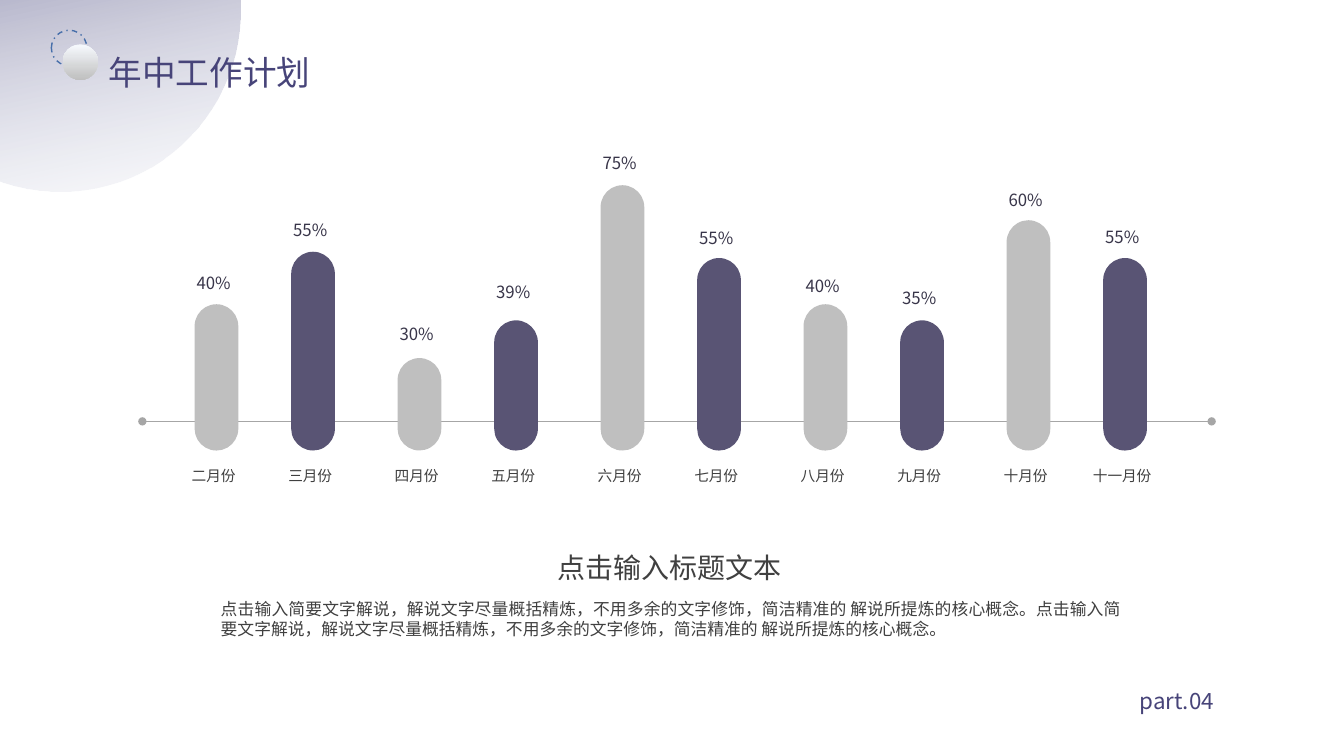
import pptx
import pptx.dml.color
import pptx.enum.dml
import pptx.enum.shapes
import pptx.enum.text
import pptx.oxml
import pptx.oxml.ns
import pptx.util
from lxml import etree

Pt = pptx.util.Pt
RGBColor = pptx.dml.color.RGBColor
Align = pptx.enum.text.PP_ALIGN
Preset = pptx.enum.shapes.MSO_SHAPE
qn = pptx.oxml.ns.qn

FONT = "Noto Sans CJK SC"
INDIGO = RGBColor(0x47, 0x44, 0x79)
PURPLE = RGBColor(0x59, 0x54, 0x74)
DARK_PURPLE = RGBColor(0x38, 0x35, 0x49)
SILVER = RGBColor(0xBF, 0xBF, 0xBF)
AXIS_GREY = RGBColor(0xA6, 0xA6, 0xA6)
TEXT_GREY = RGBColor(0x40, 0x40, 0x40)
ICE = RGBColor(0xF7, 0xFA, 0xFE)
BLUE = RGBColor(0x47, 0x6F, 0xAA)

# Month, percentage, bar height, top of the percentage label
MONTHS = [
    ("二月份", "40%", 104.5, 191.5),
    ("三月份", "55%", 142, 153.5),
    ("四月份", "30%", 66, 227.5),
    ("五月份", "39%", 93, 198),
    ("六月份", "75%", 189.5, 105.5),
    ("七月份", "55%", 137.5, 159),
    ("八月份", "40%", 104.5, 193.5),
    ("九月份", "35%", 93, 202),
    ("十月份", "60%", 164.5, 132),
    ("十一月份", "55%", 137.5, 158.5),
]
FIRST_BAR_LEFT, PAIR_PITCH, BAR_PITCH = 139, 145, 69
BAR_WIDTH, BAR_BOTTOM = 31.2, 321.8
LABEL_OFFSET, LABEL_WIDTH = 24.6, 76.4
MONTH_TOP = 330

SUMMARY = (
    "点击输入简要文字解说，解说文字尽量概括精炼，不用多余的文字修饰，简洁精准的 解说所提炼的核心概念。"
    "点击输入简要文字解说，解说文字尽量概括精炼，不用多余的文字修饰，简洁精准的 解说所提炼的核心概念。"
)


def place(shape, left, top, width, height):
    shape.left, shape.top = Pt(left), Pt(top)
    shape.width, shape.height = Pt(width), Pt(height)


def write(shape, text, size, color, align, spacing=None, inset=None):
    """Fill a text shape with one formatted paragraph."""
    frame = shape.text_frame
    frame.text = text
    frame.word_wrap = True
    frame.auto_size = pptx.enum.text.MSO_AUTO_SIZE.SHAPE_TO_FIT_TEXT
    frame.vertical_anchor = pptx.enum.text.MSO_ANCHOR.TOP
    if inset is not None:
        frame.margin_left = frame.margin_right = Pt(inset)
        frame.margin_top = frame.margin_bottom = Pt(inset)
    para = frame.paragraphs[0]
    para.alignment = align
    para.line_spacing = spacing
    para.font.size = Pt(size)
    para.font.color.rgb = color
    para.font.name = FONT
    east_asian = etree.SubElement(para.font._element, qn("a:ea"))
    east_asian.set("typeface", FONT)


def add_text(page, bounds, *content, **options):
    box = page.shapes.add_textbox(*map(Pt, bounds))
    write(box, *content, **options)


def add_plain_shape(page, preset, *bounds):
    shape = page.shapes.add_shape(preset, *map(Pt, bounds))
    shape.shadow.inherit = False
    shape.line.fill.background()
    return shape


def fill_downward(shape, start, end):
    shape.fill.gradient()
    shape.fill.gradient_angle = 270
    for stop, color, position in zip(shape.fill.gradient_stops, (start, end), (0, 1)):
        stop.color.rgb = color
        stop.position = position


def add_corner_decoration(page):
    disc = add_plain_shape(page, Preset.OVAL, -87, -124.5, 259, 261.5)
    disc.rotation = 168
    fill_downward(disc, ICE, INDIGO)
    first_color = next(disc.fill._xPr.iter(qn("a:srgbClr")))
    etree.SubElement(first_color, qn("a:alpha")).set("val", "29000")

    ring = add_plain_shape(page, Preset.OVAL, 36.7, 21.6, 25.4, 25.4)
    ring.fill.background()
    ring.line.color.rgb = BLUE
    ring.line.width = Pt(1)
    ring.line.dash_style = pptx.enum.dml.MSO_LINE.DASH_DOT

    ball = add_plain_shape(page, Preset.OVAL, 44.7, 31.7, 25.4, 25.4)
    fill_downward(ball, ICE, SILVER)


def add_axis(page, left, right, height):
    axis = page.shapes.add_connector(
        pptx.enum.shapes.MSO_CONNECTOR.STRAIGHT,
        Pt(left), Pt(height), Pt(right), Pt(height),
    )
    axis.line.color.rgb = AXIS_GREY
    axis.line.width = Pt(0.5)
    outline = axis.line._get_or_add_ln()
    for end in ("a:headEnd", "a:tailEnd"):
        etree.SubElement(outline, qn(end)).set("type", "oval")
    etree.SubElement(axis.element.spPr, qn("a:effectLst"))


def add_month(page, index, month, percentage, height, label_top):
    pair, second = divmod(index, 2)
    left = FIRST_BAR_LEFT + pair * PAIR_PITCH + second * BAR_PITCH
    bar = add_plain_shape(page, Preset.ROUNDED_RECTANGLE,
                          left, BAR_BOTTOM - height, BAR_WIDTH, height)
    bar.adjustments[0] = 0.5
    bar.fill.solid()
    bar.fill.fore_color.rgb = PURPLE if second else SILVER
    label_left = left - LABEL_OFFSET
    add_text(page, (label_left, MONTH_TOP, LABEL_WIDTH, 20),
             month, 10.5, TEXT_GREY, Align.CENTER)
    add_text(page, (label_left, label_top, LABEL_WIDTH, 21.8),
             percentage, 12, DARK_PURPLE, Align.CENTER)


def main():
    deck = pptx.Presentation()
    deck.slide_width, deck.slide_height = Pt(960), Pt(540)
    page = deck.slides.add_slide(deck.slide_layouts[5])

    add_corner_decoration(page)
    title = page.shapes.title
    page.shapes.element.append(title.element)  # in front of the disc
    place(title, 70.5, 18.7, 229.7, 46)
    write(title, "年中工作计划", 24, INDIGO, Align.JUSTIFY, spacing=1.5)

    add_axis(page, 101.7, 865.5, 301)
    for index, month in enumerate(MONTHS):
        add_month(page, index, *month)

    add_text(page, (398, 393, 162, 24.5), "点击输入标题文本", 20, TEXT_GREY,
             Align.LEFT, inset=0)
    add_text(page, (157.7, 427.7, 643.7, 29), SUMMARY, 12, TEXT_GREY,
             Align.JUSTIFY, inset=0)
    add_text(page, (807, 477.4, 111.6, 33), "part.04", 16, INDIGO,
             Align.JUSTIFY, spacing=1.5)
    deck.save("out.pptx")


if __name__ == "__main__":
    main()
